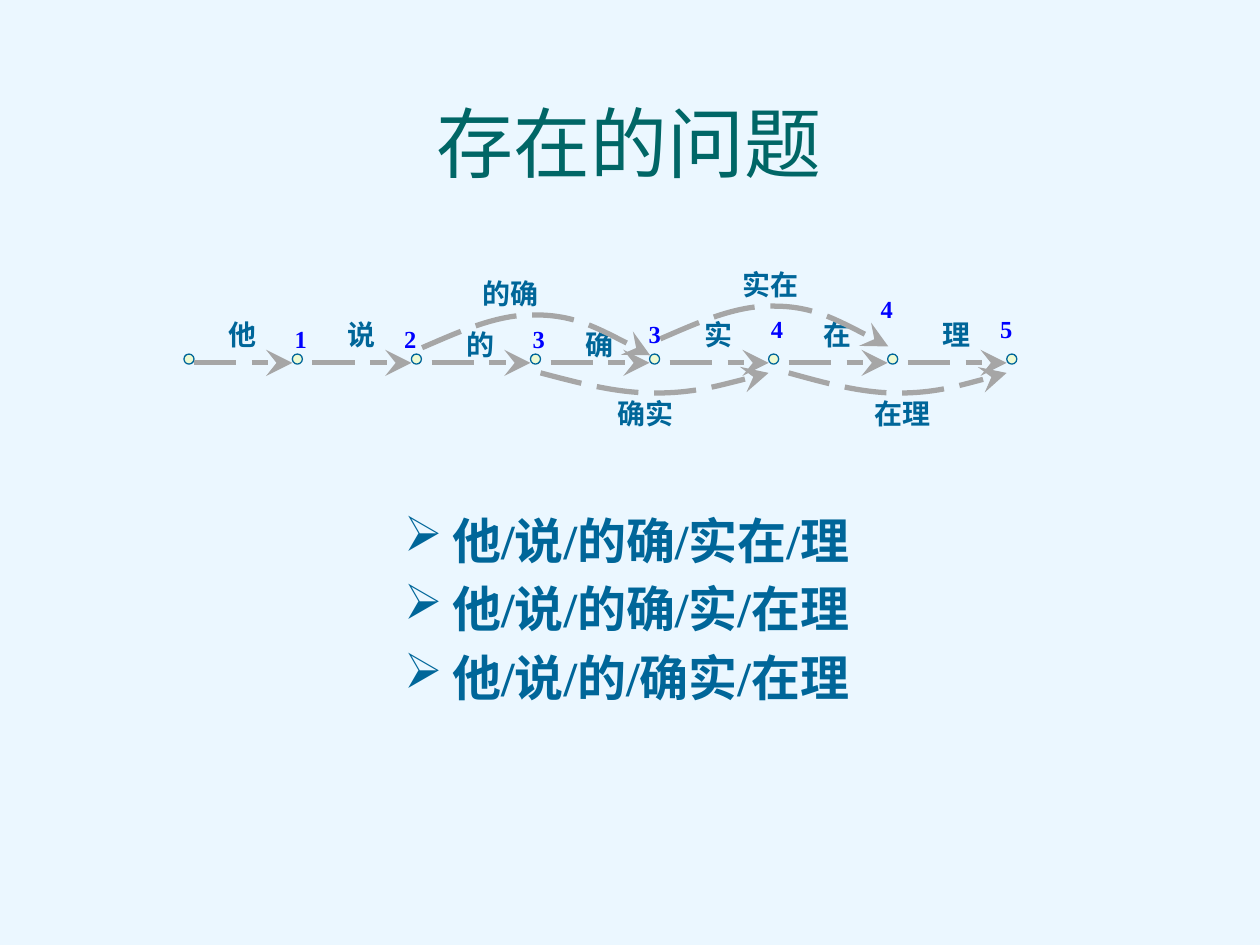
"""Build a slide showing the word lattice of an ambiguous sentence."""
from lxml.etree import SubElement
from pptx import Presentation
from pptx.dml.color import RGBColor
from pptx.enum.dml import MSO_LINE
from pptx.enum.shapes import MSO_CONNECTOR, MSO_SHAPE
from pptx.enum.text import MSO_ANCHOR, PP_ALIGN
from pptx.oxml.ns import qn
from pptx.util import Inches, Pt

BACKGROUND = RGBColor(0xEB, 0xF7, 0xFF)
TEAL = RGBColor(0x00, 0x66, 0x66)
BLUE = RGBColor(0x00, 0x66, 0x99)
BRIGHT_BLUE = RGBColor(0x00, 0x00, 0xFF)
PALE_GREEN = RGBColor(0xED, 0xFA, 0xD2)
GREY = RGBColor(0xA6, 0xA6, 0xA6)

TITLE = "存在的问题"
SEGMENTATIONS = ["他/说/的确/实在/理", "他/说/的确/实/在理", "他/说/的/确实/在理"]
WORDS = [("他", 2.49), ("说", 2.49), ("的", 2.57), ("确", 2.57),
         ("实", 2.49), ("在", 2.49), ("理", 2.49)]
COMPOUNDS = [("的确", 3.5, 2.17, 1.1), ("实在", 5.58, 2.1, 1.07),
             ("确实", 4.61, 3.12, 1.02), ("在理", 6.57, 3.12, 1.18)]
COUNTS = [("1", 2.24, 2.57), ("2", 3.11, 2.57), ("3", 4.13, 2.57), ("3", 5.05, 2.53),
          ("4", 6.02, 2.49), ("4", 6.89, 2.33), ("5", 7.84, 2.49)]

LOWER_BEND = [0, 0.08, 0.16, 0.16, 0.16, 0.08, 0]
UPPER_BEND = [0, -0.13, -0.27, -0.26, -0.26, -0.1, 0.06]
ARCS = [(4.29, 6.1, 2.96, LOWER_BEND), (6.26, 7.99, 2.96, LOWER_BEND),
        (3.35, 5.16, 2.76, UPPER_BEND), (5.24, 7.05, 2.69, UPPER_BEND)]

NODE_SIZE = 0.08
NODE_TOP = 2.81
ARROW_Y = 2.88
STEP = (7.99 - 2.32) / 6
NODE_LEFTS = [1.46] + [2.32 + STEP * index for index in range(7)]

TITLE_FONT = {"name": "Times New Roman", "size": Pt(44), "bold": False}
WORD_FONT = {"name": "Times New Roman", "size": Pt(16), "bold": True}
COUNT_FONT = {**WORD_FONT, "size": Pt(14)}
LIST_FONT = {**WORD_FONT, "size": Pt(28)}


def add_text(slide, lines, place, font, color, anchor=MSO_ANCHOR.MIDDLE,
             align=PP_ALIGN.CENTER, wrap=False):
    box = slide.shapes.add_textbox(*map(Inches, place))
    frame = box.text_frame
    frame.text = "\n".join(lines)
    frame.word_wrap = wrap
    frame.vertical_anchor = anchor
    for para in frame.paragraphs:
        para.alignment = align
        span = para.runs[0]
        for name, value in font.items():
            setattr(span.font, name, value)
        span.font.color.rgb = color
    return frame.paragraphs


def style_arrow(arrow):
    arrow.line.color.rgb = GREY
    arrow.line.width = Pt(3)
    arrow.line.dash_style = MSO_LINE.LONG_DASH
    SubElement(arrow.line._get_or_add_ln(), qn("a:tailEnd"), type="stealth", w="lg", len="lg")


def add_node(slide, left):
    node = slide.shapes.add_shape(
        MSO_SHAPE.OVAL, *map(Inches, (left, NODE_TOP, NODE_SIZE, NODE_SIZE)))
    node.shadow.inherit = False
    node.fill.solid()
    node.fill.fore_color.rgb = PALE_GREEN
    node.line.color.rgb = BLUE
    node.line.width = Pt(0.75)


def add_arrow(slide, start, end):
    arrow = slide.shapes.add_connector(
        MSO_CONNECTOR.STRAIGHT, *map(Inches, (start, ARROW_Y, end, ARROW_Y)))
    style_arrow(arrow)
    SubElement(arrow._element.spPr, qn("a:effectLst"))


def add_arc(slide, start, end, top, bend):
    points = [(Inches(start + (end - start) * index / 6), Inches(top + offset))
              for index, offset in enumerate(bend)]
    builder = slide.shapes.build_freeform(*points[0])
    builder.add_line_segments(points[1:], close=False)
    arc = builder.convert_to_shape()
    outline = next(arc._element.iter(qn("a:path")))
    segments = outline.findall(qn("a:lnTo"))
    for first in (0, 3):
        curve = SubElement(outline, qn("a:cubicBezTo"))
        for segment in segments[first:first + 3]:
            curve.append(segment[0])
            outline.remove(segment)
    arc.fill.background()
    style_arrow(arc)
    arc.shadow.inherit = False


def add_bullet(para):
    properties = para._p.get_or_add_pPr()
    properties.set("marL", str(Inches(0.38)))
    properties.set("indent", str(Inches(-0.38)))
    spacing = SubElement(properties, qn("a:spcBef"))
    SubElement(spacing, qn("a:spcPct"), val="20000")
    SubElement(properties, qn("a:buChar"), char="➢")


def main():
    deck = Presentation()
    deck.slide_width, deck.slide_height = Inches(10), Inches(7.5)
    page = deck.slides.add_slide(deck.slide_layouts[6])
    page.background.fill.solid()
    page.background.fill.fore_color.rgb = BACKGROUND

    title = add_text(page, [TITLE], (0.48, 0.11, 9.02, 1.44), TITLE_FONT, TEAL,
                     MSO_ANCHOR.BOTTOM, wrap=True)
    title[0].line_spacing = 0.9

    for left in NODE_LEFTS:
        add_node(page, left)
    for index, (word, top) in enumerate(WORDS):
        add_text(page, [word], (1.61 + STEP * index, top, 0.63, 0.32), WORD_FONT, BLUE)
        gap = NODE_SIZE * (2 if index else 1)
        add_arrow(page, NODE_LEFTS[index] + gap, NODE_LEFTS[index + 1])
    for word, left, top, width in COMPOUNDS:
        add_text(page, [word], (left, top, width, 0.32), WORD_FONT, BLUE)
    for arc in ARCS:
        add_arc(page, *arc)
    for count, left, top in COUNTS:
        add_text(page, [count], (left, top, 0.24, 0.24), COUNT_FONT, BRIGHT_BLUE)

    for para in add_text(page, SEGMENTATIONS, (3.11, 4, 5.35, 2.63), LIST_FONT, BLUE,
                         MSO_ANCHOR.TOP, PP_ALIGN.LEFT, True):
        add_bullet(para)
    deck.save("out.pptx")


if __name__ == "__main__":
    main()
